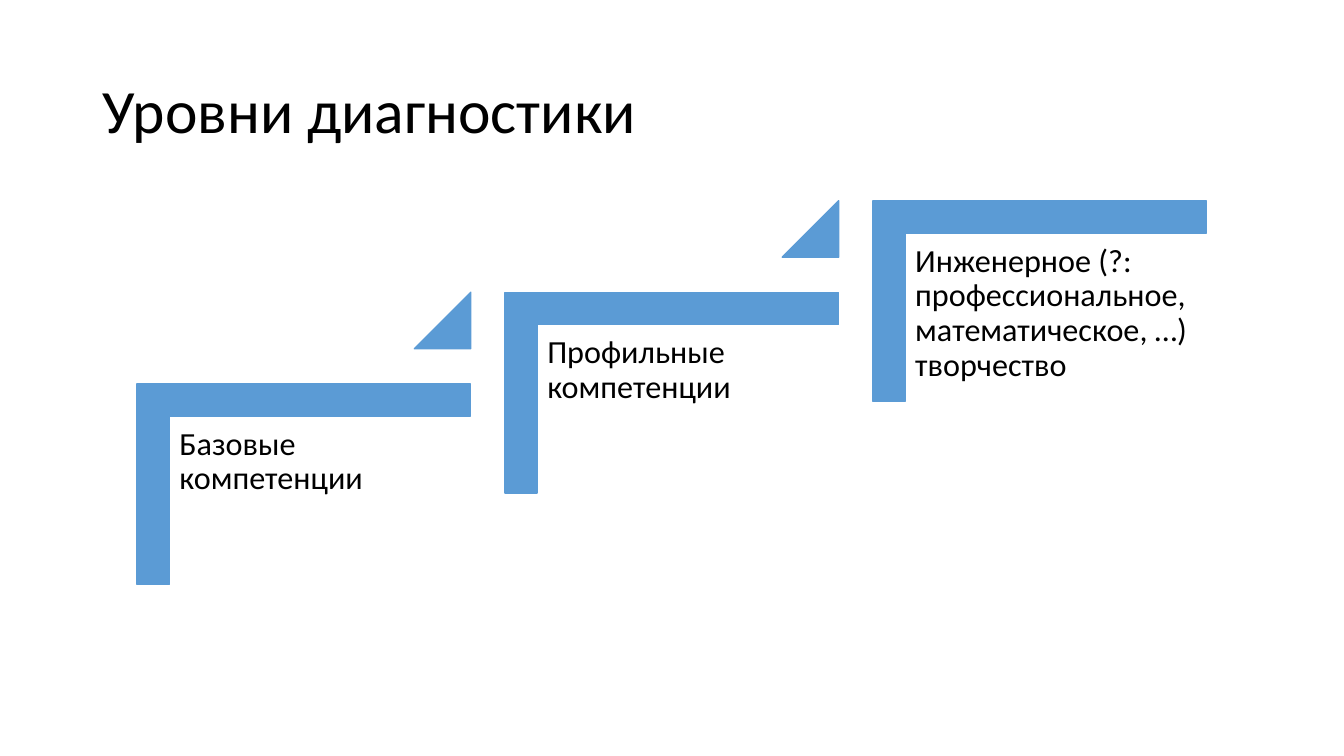
"""Build a slide showing three ascending levels of diagnostics."""
from pptx import Presentation
from pptx.dml.color import RGBColor
from pptx.enum import shapes, text
from pptx.util import Pt

HEADING = "Уровни диагностики"
LEVELS = [
    "Базовые компетенции",
    "Профильные компетенции",
    "Инженерное (?: профессиональное, математическое, …) творчество",
]
THEME = {
    "font": "Calibri",
    "ink": RGBColor.from_string("000000"),
    "step": RGBColor.from_string("5B9BD5"),
    "heading_size": 44,
    "level_size": 23,
}
SLIDE = (960, 540)
HEADING_BOX = (66, 28.8, 828, 104.4)
STEP_X, STEP_Y = 262.8, -65.4
CORNER_BOX = (145.44, 226.8, 143.28, 238.32)
LABEL_BOX = (121, 298.1, 215.3, 188.6)
RISE_BOX = (296, 208.8, 40.32, 40.32)


def stair_box(box, level):
    left, top, width, height = box
    return [Pt(v) for v in (left + level * STEP_X, top + level * STEP_Y, width, height)]


def write(holder, words, size, anchor, inset_x, inset_y):
    frame = holder.text_frame
    frame.text = words
    frame_format = {
        "word_wrap": True,
        "auto_size": text.MSO_AUTO_SIZE.NONE,
        "vertical_anchor": anchor,
        "margin_left": Pt(inset_x),
        "margin_right": Pt(inset_x),
        "margin_top": Pt(inset_y),
        "margin_bottom": Pt(inset_y),
    }
    for name, value in frame_format.items():
        setattr(frame, name, value)
    line = frame.paragraphs[0]
    line.alignment = text.PP_ALIGN.LEFT
    line.line_spacing = 0.9
    font = line.runs[0].font
    font.name, font.size = THEME["font"], Pt(size)
    font.color.rgb = THEME["ink"]


def draw_step(slide, kind, box, adjustments, rotation=0):
    step = slide.shapes.add_shape(kind, *box)
    step.rotation = rotation
    step.shadow.inherit = False
    for index, value in enumerate(adjustments):
        step.adjustments[index] = value
    step.fill.solid()
    step.fill.fore_color.rgb = THEME["step"]
    step.line.color.rgb = THEME["step"]
    step.line.width = Pt(1)


def main():
    deck = Presentation()
    deck.slide_width, deck.slide_height = map(Pt, SLIDE)
    slide = deck.slides.add_slide(deck.slide_layouts[5])
    heading = slide.shapes.title
    for side, value in zip(("left", "top", "width", "height"), HEADING_BOX):
        setattr(heading, side, Pt(value))
    write(heading, HEADING, THEME["heading_size"], text.MSO_ANCHOR.MIDDLE, 7.2, 3.6)

    for level, words in enumerate(LEVELS):
        draw_step(slide, shapes.MSO_SHAPE.CORNER, stair_box(CORNER_BOX, level), (0.16, 0.16), 90)
        label = slide.shapes.add_textbox(*stair_box(LABEL_BOX, level))
        write(label, words, THEME["level_size"], text.MSO_ANCHOR.TOP, 7.2, 7.2)
        if level < len(LEVELS) - 1:
            draw_step(slide, shapes.MSO_SHAPE.ISOSCELES_TRIANGLE, stair_box(RISE_BOX, level), (1,))
    deck.save("out.pptx")


if __name__ == "__main__":
    main()
